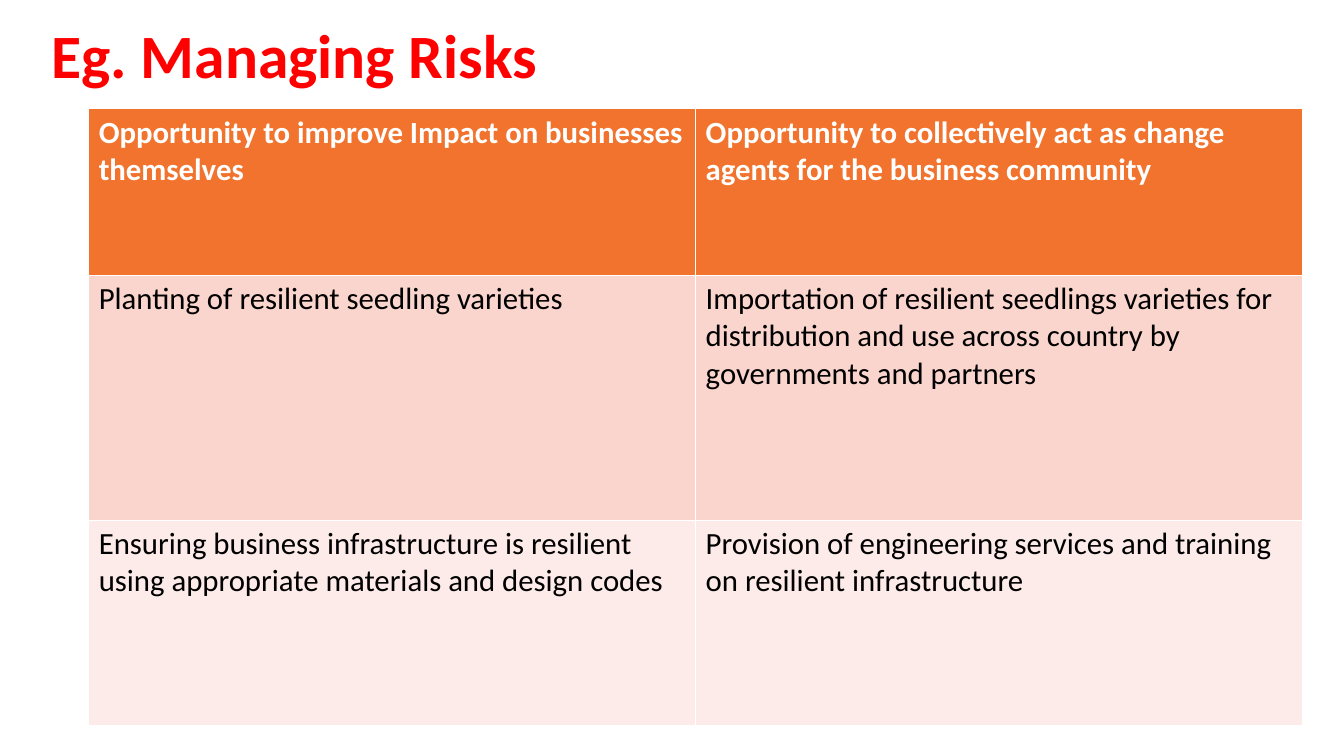
from pptx import Presentation
from pptx.dml.color import RGBColor
from pptx.enum import text
from pptx.util import Inches, Pt

COLORS = {"title": "FF0000", "header": "F1732D", "header_text": "FFFFFF",
          "band_dark": "FAD5CD", "band_light": "FCEBE8", "body_text": "000000"}


def style_text(tf, size, color, bold):
    for p in tf.paragraphs:
        for r in p.runs:
            r.font.name = "Calibri"
            r.font.size = Pt(size)
            r.font.bold = bold
            r.font.color.rgb = RGBColor.from_string(COLORS[color])


prs = Presentation()
prs.slide_width, prs.slide_height = Inches(13.33), Inches(7.5)
s = prs.slides.add_slide(prs.slide_layouts[6])

# Title
title = s.shapes.add_textbox(Inches(0.41), Inches(0.09), Inches(8.65), Inches(0.99))
tf = title.text_frame
tf.word_wrap = True
tf.vertical_anchor = text.MSO_ANCHOR.MIDDLE
tf.text = "Eg. Managing Risks"
tf.paragraphs[0].line_spacing = 0.9
style_text(tf, 44, "title", True)

# Opportunities table: height, fill, text colour, bold, cell texts
rows = [
    (1.65, "header", "header_text", True,
     ["Opportunity to improve Impact on businesses themselves",
      "Opportunity to collectively act as change agents for the business community"]),
    (2.43, "band_dark", "body_text", False,
     ["Planting of resilient seedling varieties",
      "Importation of resilient seedlings varieties for distribution and use "
      "across country by governments and partners"]),
    (2.04, "band_light", "body_text", False,
     ["Ensuring business infrastructure is resilient using appropriate materials "
      "and design codes",
      "Provision of engineering services and training on resilient infrastructure"]),
]
# The default table style supplies the white grid and the thicker header rule.
table = s.shapes.add_table(len(rows), 2, Inches(0.88), Inches(1.08),
                           Inches(12.04), Inches(6.12)).table
for i, (height, fill, color, bold, cell_texts) in enumerate(rows):
    table.rows[i].height = Inches(height)
    for cell, cell_text in zip(table.rows[i].cells, cell_texts):
        cell.fill.solid()
        cell.fill.fore_color.rgb = RGBColor.from_string(COLORS[fill])
        cell.text_frame.text = cell_text
        style_text(cell.text_frame, 22, color, bold)

prs.save("out.pptx")
